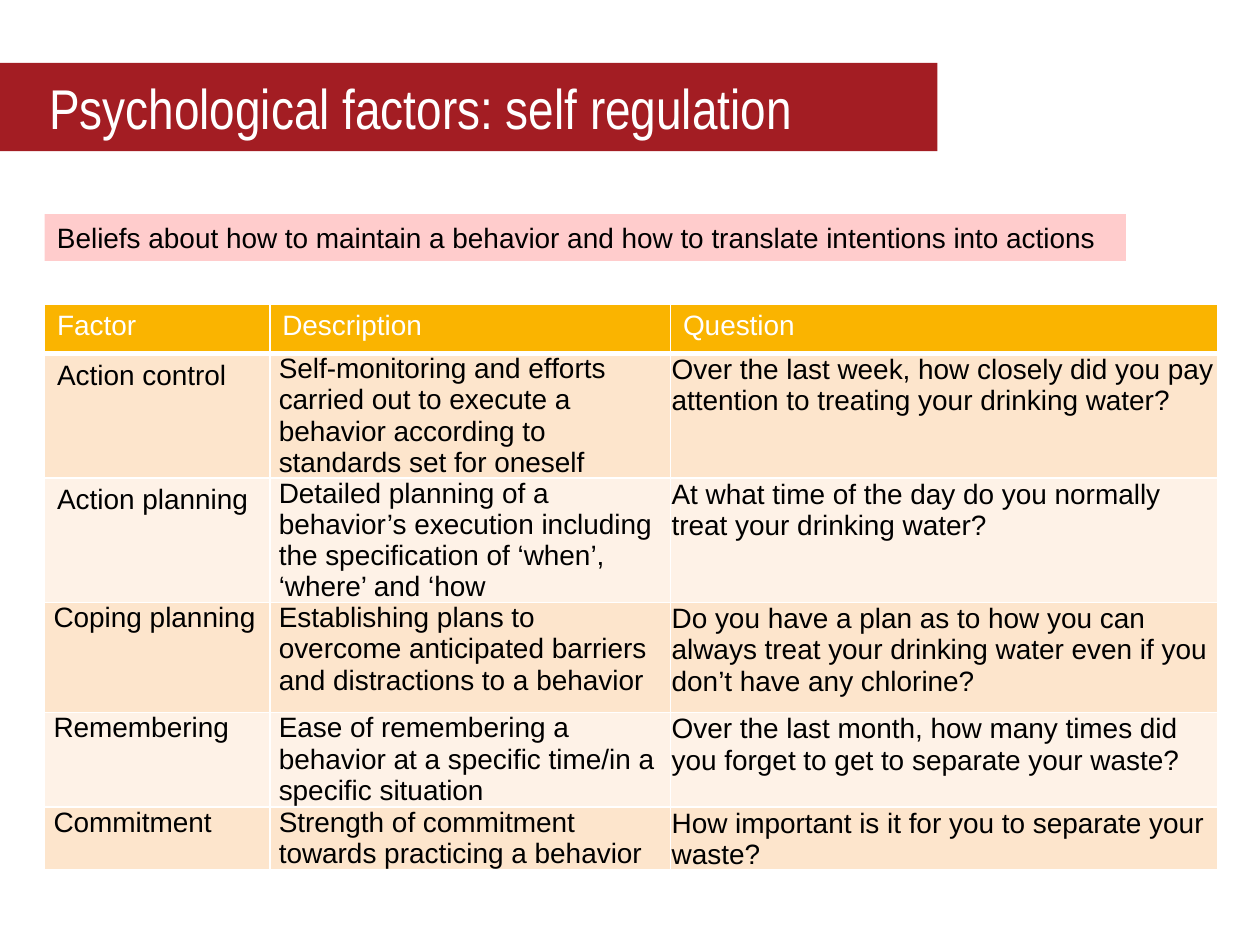
from lxml import etree
from pptx import Presentation
from pptx.dml.color import RGBColor
from pptx.enum.shapes import MSO_SHAPE
from pptx.enum.text import MSO_ANCHOR, PP_ALIGN
from pptx.oxml.ns import qn
from pptx.util import Cm, Pt

RECTANGLE = MSO_SHAPE.RECTANGLE
MIDDLE, TOP = MSO_ANCHOR.MIDDLE, MSO_ANCHOR.TOP
LEFT = PP_ALIGN.LEFT

RED = RGBColor(0xA3, 0x1D, 0x23)
PINK = RGBColor(0xFF, 0xCC, 0xCC)
AMBER = RGBColor(0xFA, 0xB4, 0x00)
BANDS = (RGBColor(0xFD, 0xE5, 0xCC), RGBColor(0xFE, 0xF2, 0xE7))
WHITE = RGBColor(0xFF, 0xFF, 0xFF)
BLACK = RGBColor(0, 0, 0)

# Cell margins in cm: left, top, right, bottom
ROOMY = (0.25, 0.13, 0.25, 0.13)
SNUG = (0.18, 0, 0.18, 0)
TIGHT = (0.02, 0.02, 0.02, 0)

COLUMN_WIDTHS = (4.54, 8.08, 11.03)
ROW_HEIGHTS = (1, 2.51, 2.51, 2.22, 1.9, 1.27)
HEADINGS = ("Factor", "Description", "Question")
FACTORS = (
    ("Action control",
     "Self-monitoring and efforts carried out to execute a behavior according to standards set for oneself",
     "Over the last week, how closely did you pay attention to treating your drinking water?"),
    ("Action planning",
     "Detailed planning of a behavior’s execution including the specification of ‘when’, ‘where’ and ‘how",
     "At what time of the day do you normally treat your drinking water?"),
    ("Coping planning",
     "Establishing plans to overcome anticipated barriers and distractions to a behavior",
     "Do you have a plan as to how you can always treat your drinking water even if you don’t have any chlorine?"),
    ("Remembering",
     "Ease of remembering a behavior at a specific time/in a specific situation",
     "Over the last month, how many times did you forget to get to separate your waste?"),
    ("Commitment",
     "Strength of commitment towards practicing a behavior",
     "How important is it for you to separate your waste?"),
)


def write(frame, text, color, size=16, font="Arial"):
    paragraph = frame.paragraphs[0]
    paragraph.alignment = LEFT
    run = paragraph.add_run()
    run.text = text
    run.font.size = Pt(size)
    run.font.name = font
    run.font.color.rgb = color


def add_bar(slide, left, top, width, height, fill, inset):
    """Add a plain filled bar and return its text frame."""
    bar = slide.shapes.add_shape(RECTANGLE, Cm(left), Cm(top), Cm(width), Cm(height))
    bar.shadow.inherit = False
    bar.fill.solid()
    bar.fill.fore_color.rgb = fill
    bar.line.fill.background()
    frame = bar.text_frame
    frame.word_wrap = True
    frame.vertical_anchor = MIDDLE
    frame.margin_left = frame.margin_right = Cm(inset)
    frame.margin_top = frame.margin_bottom = Cm(0.13)
    return frame


def add_title(slide, left, top, width, height):
    frame = add_bar(slide, left, top, width, height, RED, 0.99)
    write(frame, "Psychological factors: self regulation", WHITE, 32, "Arial Narrow")


def add_definition(slide, left, top, width, height):
    frame = add_bar(slide, left, top, width, height, PINK, 0.25)
    write(frame, "Beliefs about how to maintain a behavior and how to translate "
                 "intentions into actions", BLACK)


def set_borders(cell, top, bottom):
    """Draw white cell borders; the fill must follow them in the XML."""
    properties = cell._tc.get_or_add_tcPr()
    for tag, points in (("a:lnL", 1), ("a:lnR", 1), ("a:lnT", top), ("a:lnB", bottom)):
        line = etree.SubElement(properties, qn(tag), w=str(Pt(points)))
        solid = etree.SubElement(line, qn("a:solidFill"))
        etree.SubElement(solid, qn("a:srgbClr"), val=str(WHITE))


def fill_cell(cell, text, color, fill, margins, top=1, bottom=1):
    (cell.margin_left, cell.margin_top,
     cell.margin_right, cell.margin_bottom) = map(Cm, margins)
    cell.vertical_anchor = TOP
    set_borders(cell, top, bottom)
    cell.fill.solid()
    cell.fill.fore_color.rgb = fill
    write(cell.text_frame, text, color)


def add_factor_table(slide, left, top):
    table = slide.shapes.add_table(
        len(ROW_HEIGHTS), len(COLUMN_WIDTHS), Cm(left), Cm(top),
        Cm(sum(COLUMN_WIDTHS)), Cm(sum(ROW_HEIGHTS))).table
    for column, width in zip(table.columns, COLUMN_WIDTHS):
        column.width = Cm(width)
    for row, height in zip(table.rows, ROW_HEIGHTS):
        row.height = Cm(height)

    # Heading row, with a thick rule below
    for column, heading in enumerate(HEADINGS):
        fill_cell(table.cell(0, column), heading, WHITE, AMBER, ROOMY, bottom=3)

    # Banded factor rows; the first two factor names sit lower
    for row, factor in enumerate(FACTORS, start=1):
        margins = (ROOMY if row <= 2 else SNUG, SNUG, TIGHT)
        for column, text in enumerate(factor):
            fill_cell(table.cell(row, column), text, BLACK, BANDS[(row - 1) % 2],
                      margins[column], top=3 if row == 1 else 1)


def main():
    presentation = Presentation()
    presentation.slide_width = Cm(25.4)
    presentation.slide_height = Cm(19.05)
    slide = presentation.slides.add_slide(presentation.slide_layouts[6])
    add_title(slide, 0, 1.27, 18.9, 1.78)
    add_factor_table(slide, 0.9, 6.13)
    add_definition(slide, 0.9, 4.32, 21.8, 0.94)
    presentation.save("out.pptx")


if __name__ == "__main__":
    main()
